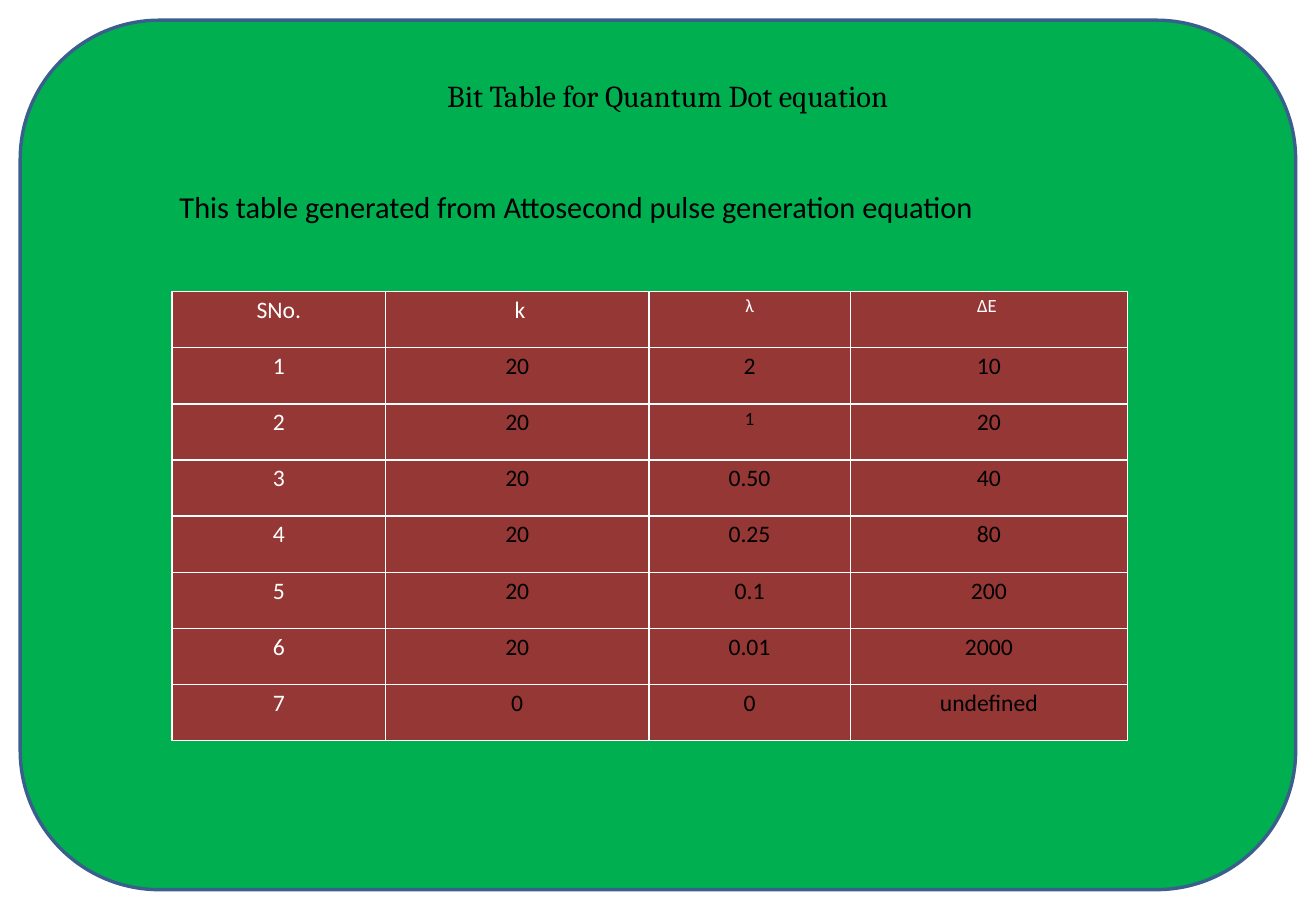
from dataclasses import dataclass

import pptx
import pptx.dml.color
import pptx.enum.shapes
import pptx.enum.text
import pptx.oxml
import pptx.oxml.ns
import pptx.util

PX = 3810  # EMU: 240 px to the inch
COLORS = {
    "panel": "00B050",
    "outline": "3A5F8C",
    "cell": "953735",
    "light": "FFFFFF",
    "dark": "000000",
}
COLUMN_WIDTHS = [422, 520, 398, 548]
ROW_HEIGHT = 111
QUANTUM_DOT_ROWS = [
    ["SNo.", " k", "λ", "ΔE "],
    ["1", "20", "2", "10"],
    ["2", "20", "1", "20"],
    ["3", "20", "0.50", "40"],
    ["4", "20", "0.25", "80"],
    ["5", "20", "0.1", "200"],
    ["6", "20", "0.01", "2000"],
    ["7", "0", "0", "undefined"],
]
SMALL_CELLS = {(0, 2), (0, 3), (2, 2)}


@dataclass
class Caption:
    text: str
    left: int
    top: int
    width: int
    height: int
    font: str


CAPTIONS = [
    Caption("Bit Table for Quantum Dot equation", 860, 140, 967, 170, "Cambria"),
    Caption("This table generated from Attosecond pulse generation equation",
            331, 360, 1637, 266, "Calibri"),
]


def px(length: int) -> pptx.util.Emu:
    return pptx.util.Emu(length * PX)


def rgb(name: str) -> pptx.dml.color.RGBColor:
    return pptx.dml.color.RGBColor.from_string(COLORS[name])


def format_font(paragraph, face: str, size: int, color: str) -> None:
    font = paragraph.runs[0].font
    font.name = face
    font.size = pptx.util.Pt(size)
    font.color.rgb = rgb(color)


def add_panel(slide) -> None:
    panel = slide.shapes.add_shape(
        pptx.enum.shapes.MSO_SHAPE.ROUNDED_RECTANGLE,
        px(40), px(40), px(2520), px(1718))
    panel.adjustments[0] = 0.16
    panel.shadow.inherit = False
    panel.fill.solid()
    panel.fill.fore_color.rgb = rgb("panel")
    panel.line.color.rgb = rgb("outline")
    panel.line.width = pptx.util.Pt(2)


def add_caption(slide, caption: Caption) -> None:
    box = slide.shapes.add_textbox(
        px(caption.left), px(caption.top), px(caption.width), px(caption.height))
    box.text_frame.word_wrap = True
    box.text_frame.text = caption.text
    format_font(box.text_frame.paragraphs[0], caption.font, 18, "dark")


def add_borders(cell) -> None:
    """Draw all four sides; the schema wants them ahead of the fill."""
    properties = cell._tc.get_or_add_tcPr()
    for position, side in enumerate(["lnL", "lnR", "lnT", "lnB"]):
        border = pptx.oxml.parse_xml(
            f'<a:{side} {pptx.oxml.ns.nsdecls("a")} w="{pptx.util.Pt(1)}">'
            f'<a:solidFill><a:srgbClr val="{COLORS["light"]}"/></a:solidFill>'
            f'</a:{side}>')
        properties.insert(position, border)


def fill_cell(cell, text: str, size: int, color: str) -> None:
    cell.margin_left = cell.margin_right = px(17)
    cell.margin_top = cell.margin_bottom = 0
    cell.fill.solid()
    cell.fill.fore_color.rgb = rgb("cell")
    add_borders(cell)
    cell.text_frame.text = text
    paragraph = cell.text_frame.paragraphs[0]
    paragraph.alignment = pptx.enum.text.PP_ALIGN.CENTER
    paragraph.line_spacing = 1.15
    format_font(paragraph, "Calibri", size, color)


def add_bit_table(slide) -> None:
    row_count = len(QUANTUM_DOT_ROWS)
    bit_table = slide.shapes.add_table(
        row_count, len(COLUMN_WIDTHS), px(340), px(576),
        px(sum(COLUMN_WIDTHS)), px(ROW_HEIGHT * row_count)).table
    for column, width in zip(bit_table.columns, COLUMN_WIDTHS):
        column.width = px(width)
    for r, values in enumerate(QUANTUM_DOT_ROWS):
        bit_table.rows[r].height = px(ROW_HEIGHT)
        for c, value in enumerate(values):
            size = 11 if (r, c) in SMALL_CELLS else 14
            color = "light" if r == 0 or c == 0 else "dark"
            fill_cell(bit_table.cell(r, c), value, size, color)


def main() -> None:
    presentation = pptx.Presentation()
    presentation.slide_width = px(2600)
    presentation.slide_height = px(1800)
    slide = presentation.slides.add_slide(presentation.slide_layouts[6])
    add_panel(slide)
    for caption in CAPTIONS:
        add_caption(slide, caption)
    add_bit_table(slide)
    presentation.save("out.pptx")


if __name__ == "__main__":
    main()
